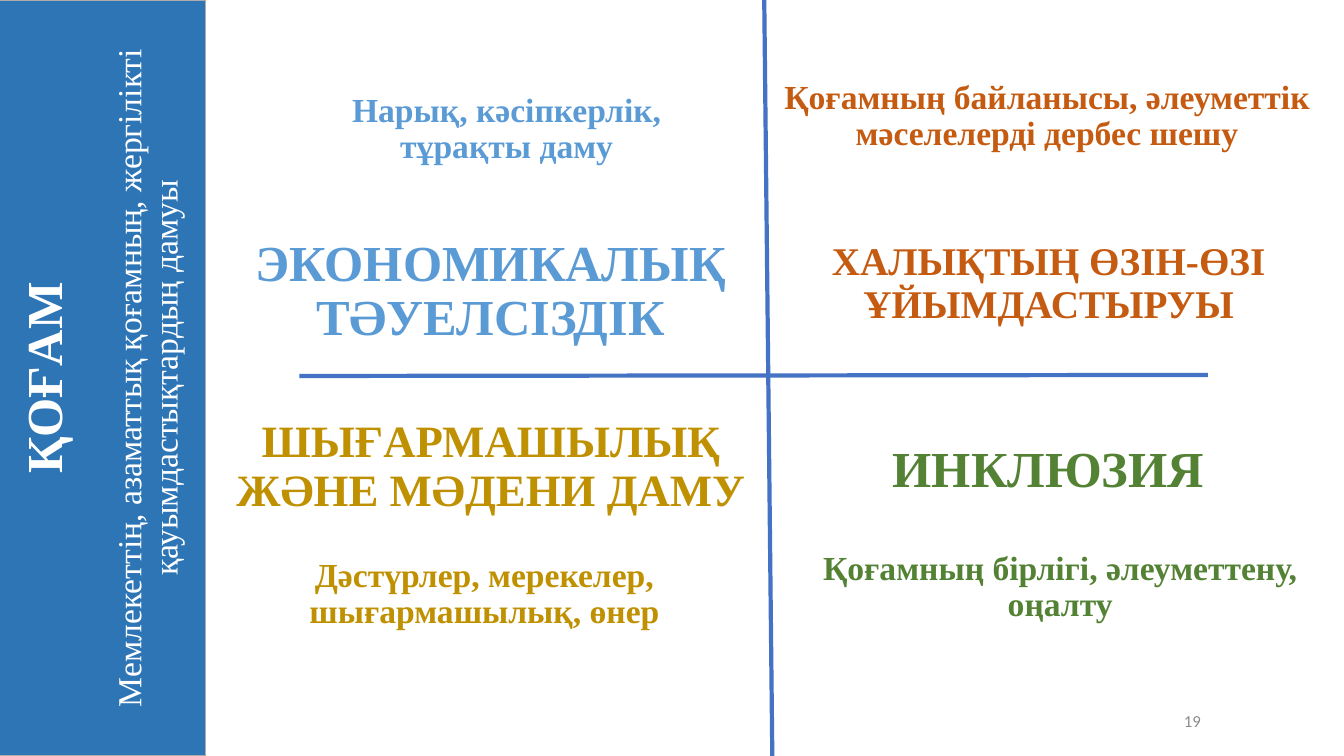
from lxml import etree
from pptx import Presentation
from pptx.dml.color import RGBColor
from pptx.enum import shapes, text
from pptx.oxml import ns
from pptx.util import Inches, Pt

SERIF = "Times New Roman"
WIDTH, HEIGHT = 13.33, 7.5
SIDEBAR_WIDTH = 2.04
CROSS_X, CROSS_Y = 7.62, 3.72


def color(hex_code):
    return RGBColor.from_string(hex_code)


def add_text(slide, box, lines, ink, font=SERIF, align=text.PP_ALIGN.CENTER,
             anchor=text.MSO_ANCHOR.TOP, spacing=0.9):
    """Add a text box; each line is (words, size, bold, space before)."""
    label = slide.shapes.add_textbox(*map(Inches, box))
    frame = label.text_frame
    frame.word_wrap = True
    frame.vertical_anchor = anchor
    for number, (words, size, bold, before) in enumerate(lines):
        paragraph = frame.add_paragraph() if number else frame.paragraphs[0]
        paragraph.text = words
        paragraph.alignment = align
        paragraph.line_spacing = spacing
        paragraph.space_before = Pt(before)
        paragraph.font.name = font
        paragraph.font.size = Pt(size)
        paragraph.font.bold = bold
        paragraph.font.color.rgb = color(ink)
    return label


def add_sidebar(slide, left, top, width, height):
    panel = slide.shapes.add_shape(shapes.MSO_SHAPE.RECTANGLE,
                                   *map(Inches, (left, top, width, height)))
    panel.shadow.inherit = False
    panel.fill.solid()
    panel.fill.fore_color.rgb = color("2E75B6")
    panel.line.color.rgb = color("AFABAB")
    panel.line.width = Pt(1)

    # Before its quarter turn the title is as wide as the panel is high.
    length = height - 0.2
    title_box = (left + (width - length) / 2, top + (height - width) / 2, length, width)
    title = add_text(slide, title_box, [
        ("ҚОҒАМ", 36, True, 0),
        ("Мемлекеттің, азаматтық қоғамның, жергілікті қауымдастықтардың дамуы",
         24, False, 28),
    ], "FFFFFF", anchor=text.MSO_ANCHOR.MIDDLE)
    title.rotation = 270


def add_axis(slide, start, end):
    axis = slide.shapes.add_connector(shapes.MSO_CONNECTOR.STRAIGHT,
                                      *map(Inches, (*start, *end)))
    axis.line.color.rgb = color("4472C4")
    axis.line.width = Pt(3)
    etree.SubElement(axis.element.spPr, ns.qn("a:effectLst"))


def add_quadrant(slide, left, top, ink, *entries):
    """Place entries of (words, size, box), each box measured from the corner."""
    for words, size, (dx, dy, width, height) in entries:
        add_text(slide, (left + dx, top + dy, width, height),
                 [(words, size, True, 10)], ink)


def add_page_number(slide, left, top, width, height):
    add_text(slide, (left, top, width, height), [("19", 12, False, 0)], "8C8C8C",
             font="Calibri", align=text.PP_ALIGN.RIGHT,
             anchor=text.MSO_ANCHOR.MIDDLE, spacing=1.0)


def main():
    deck = Presentation()
    deck.slide_width, deck.slide_height = Inches(WIDTH), Inches(HEIGHT)
    slide = deck.slides.add_slide(deck.slide_layouts[6])

    add_page_number(slide, 9.01, 6.95, 3, 0.4)
    add_axis(slide, (CROSS_X - 0.04, 0), (CROSS_X + 0.04, HEIGHT))
    add_axis(slide, (2.97, CROSS_Y + 0.01), (11.98, CROSS_Y))

    add_quadrant(slide, SIDEBAR_WIDTH, 0, "5B9BD5",
                 ("Нарық, кәсіпкерлік, тұрақты даму", 24, (0.68, 0.88, 4.61, 1.02)),
                 ("ЭКОНОМИКАЛЫҚ ТӘУЕЛСІЗДІК", 36, (0.38, 2.31, 4.89, 1.43)))
    add_quadrant(slide, CROSS_X, 0, "C55A11",
                 ("Қоғамның байланысы, әлеуметтік мәселелерді дербес шешу", 24,
                  (0.04, 0.75, 5.45, 1.27)),
                 ("ХАЛЫҚТЫҢ ӨЗІН-ӨЗІ ҰЙЫМДАСТЫРУЫ", 28, (0.28, 2.35, 5, 1.09)))
    add_quadrant(slide, SIDEBAR_WIDTH, CROSS_Y, "BF9000",
                 ("ШЫҒАРМАШЫЛЫҚ ЖӘНЕ МӘДЕНИ ДАМУ", 32, (0.04, 0.39, 5.58, 1.09)),
                 ("Дәстүрлер, мерекелер, шығармашылық, өнер", 24,
                  (0.25, 1.77, 5.03, 0.66)))
    add_quadrant(slide, CROSS_X, CROSS_Y, "548235",
                 ("ИНКЛЮЗИЯ", 36, (0.98, 0.64, 3.6, 0.84)),
                 ("Қоғамның бірлігі, әлеуметтену, оңалту", 24,
                  (0.4, 1.7, 4.99, 0.79)))

    add_sidebar(slide, -0.02, 0, SIDEBAR_WIDTH + 0.02, HEIGHT)
    deck.save("out.pptx")


if __name__ == "__main__":
    main()
